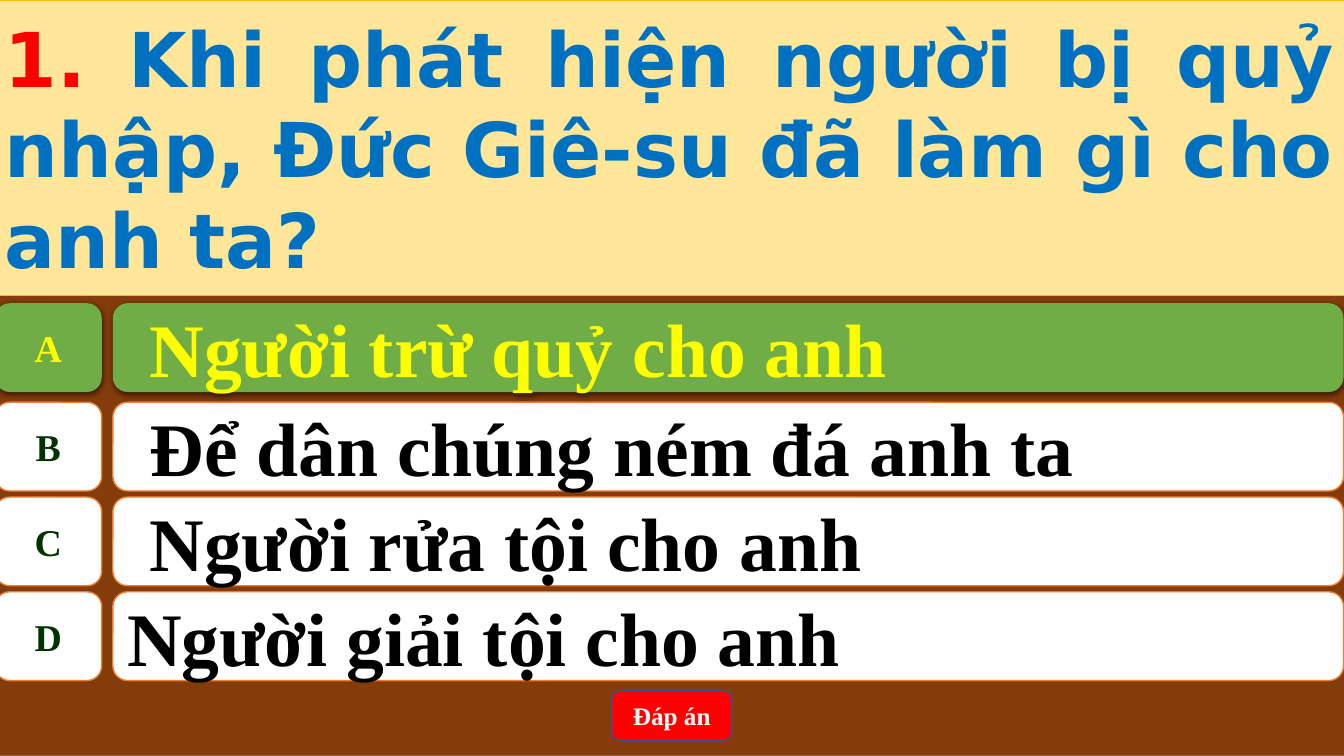
from lxml.etree import SubElement
from pptx import Presentation
from pptx.dml.color import RGBColor
from pptx.enum.shapes import MSO_SHAPE
from pptx.enum.text import MSO_ANCHOR, PP_ALIGN
from pptx.oxml.ns import qn
from pptx.util import Pt

BROWN = RGBColor(0x84, 0x3C, 0x0B)
STEEL = RGBColor(0x43, 0x73, 0x9E)
CREAM = RGBColor(0xFF, 0xE6, 0x99)
GOLD = RGBColor(0xFF, 0xC0, 0x00)
WHITE = RGBColor(0xFF, 0xFF, 0xFF)
BLACK = RGBColor(0x00, 0x00, 0x00)
ORANGE = RGBColor(0xED, 0x7D, 0x31)
GREEN = RGBColor(0x70, 0xAD, 0x47)
DARK_GREEN = RGBColor(0x00, 0x33, 0x00)
YELLOW = RGBColor(0xFF, 0xFF, 0x00)
RED = RGBColor(0xFF, 0x00, 0x00)
BLUE = RGBColor(0x00, 0x70, 0xC0)
NAVY = RGBColor(0x32, 0x54, 0x91)

SERIF = "Times New Roman"
SANS = "DejaVu Sans"
SLIDE_WIDTH, SLIDE_HEIGHT = 960, 540
LEFT, FULL_WIDTH = -3.6, 964
LETTER_WIDTH, ROW_HEIGHT = 76.3, 63.4
ANSWER_LEFT, ANSWER_WIDTH = 80.6, 879.1
FIRST_TOP, ROW_PITCH, CORRECT_LIFT = 219.6, 67.7, 3

ANSWERS = (
    ("A", "Người trừ quỷ cho anh", True),
    ("B", "Để dân chúng ném đá anh ta", True),
    ("C", "Người rửa tội cho anh", True),
    ("D", "Người giải tội cho anh", False),
)
CORRECT = "A"


def add_panel(page, kind, bounds, fill, line=None, line_width=1):
    """Add a filled shape with an optional outline."""
    box = page.shapes.add_shape(kind, *(Pt(length) for length in bounds))
    box.shadow.inherit = False
    box.fill.solid()
    box.fill.fore_color.rgb = fill
    if line is None:
        box.line.fill.background()
    else:
        box.line.color.rgb = line
        box.line.width = Pt(line_width)
    return box


def add_shadow(box):
    """Give a shape a soft shadow straight below it."""
    effects = box._element.spPr.find(qn("a:effectLst"))
    shadow = SubElement(effects, qn("a:outerShdw"), blurRad=str(Pt(4.5)),
                        dist=str(Pt(1.5)), dir="5400000", algn="ctr", rotWithShape="0")
    color = SubElement(shadow, qn("a:srgbClr"), val=str(BLACK))
    SubElement(color, qn("a:alpha"), val="63000")


def write_text(box, spans, size, font=SERIF, align=PP_ALIGN.LEFT, wrap=True):
    """Write one bold paragraph made of (text, colour) spans."""
    frame = box.text_frame
    frame.word_wrap = wrap
    frame.vertical_anchor = MSO_ANCHOR.MIDDLE
    para = frame.paragraphs[0]
    para.alignment = align
    for text, color in spans:
        span = para.add_run()
        span.text = text
        span.font.color.rgb = color
        for name, value in {"name": font, "size": Pt(size), "bold": True}.items():
            setattr(span.font, name, value)
    return para


def add_answer(page, index, letter, answer, indented):
    """Add a letter tile and its answer bar, highlighted when correct."""
    top = FIRST_TOP + index * ROW_PITCH
    fill, line, letter_color, answer_color = WHITE, ORANGE, DARK_GREEN, BLACK
    if letter == CORRECT:
        top -= CORRECT_LIFT
        fill, line, letter_color, answer_color = GREEN, None, YELLOW, YELLOW
    tile = add_panel(page, MSO_SHAPE.FLOWCHART_ALTERNATE_PROCESS,
                     (LEFT, top, LETTER_WIDTH, ROW_HEIGHT), fill, line)
    bar = add_panel(page, MSO_SHAPE.ROUNDED_RECTANGLE,
                    (ANSWER_LEFT, top, ANSWER_WIDTH, ROW_HEIGHT), fill, line)
    write_text(tile, [(letter, letter_color)], 27, align=PP_ALIGN.CENTER, wrap=False)
    para = write_text(bar, [(answer, answer_color)], 54)
    if indented:
        para.level = 1
        for name, value in {"marL": Pt(36), "indent": Pt(-20)}.items():
            para._p.get_or_add_pPr().set(name, str(value))
    if letter == CORRECT:
        for box in (tile, bar):
            add_shadow(box)


def main():
    """Build the quiz slide and save it."""
    deck = Presentation()
    deck.slide_width, deck.slide_height = Pt(SLIDE_WIDTH), Pt(SLIDE_HEIGHT)
    page = deck.slides.add_slide(deck.slide_layouts[6])
    add_panel(page, MSO_SHAPE.RECTANGLE, (LEFT, 0, FULL_WIDTH, SLIDE_HEIGHT), BROWN, STEEL)
    question = add_panel(page, MSO_SHAPE.RECTANGLE, (LEFT, 0, FULL_WIDTH, 211), CREAM, GOLD, 0.5)
    write_text(question, [
        ("1. ", RED),
        ("Khi phát hiện người bị quỷ nhập, Đức Giê-su đã làm gì cho anh ta?", BLUE),
    ], 54, SANS, PP_ALIGN.JUSTIFY)
    for index, (letter, answer, indented) in enumerate(ANSWERS):
        add_answer(page, index, letter, answer, indented)
    button = add_panel(page, MSO_SHAPE.ROUNDED_RECTANGLE, (437, 493.2, 85.7, 36), RED, NAVY)
    write_text(button, [("Đáp án", WHITE)], 18, align=PP_ALIGN.CENTER)
    deck.save("out.pptx")


if __name__ == "__main__":
    main()
